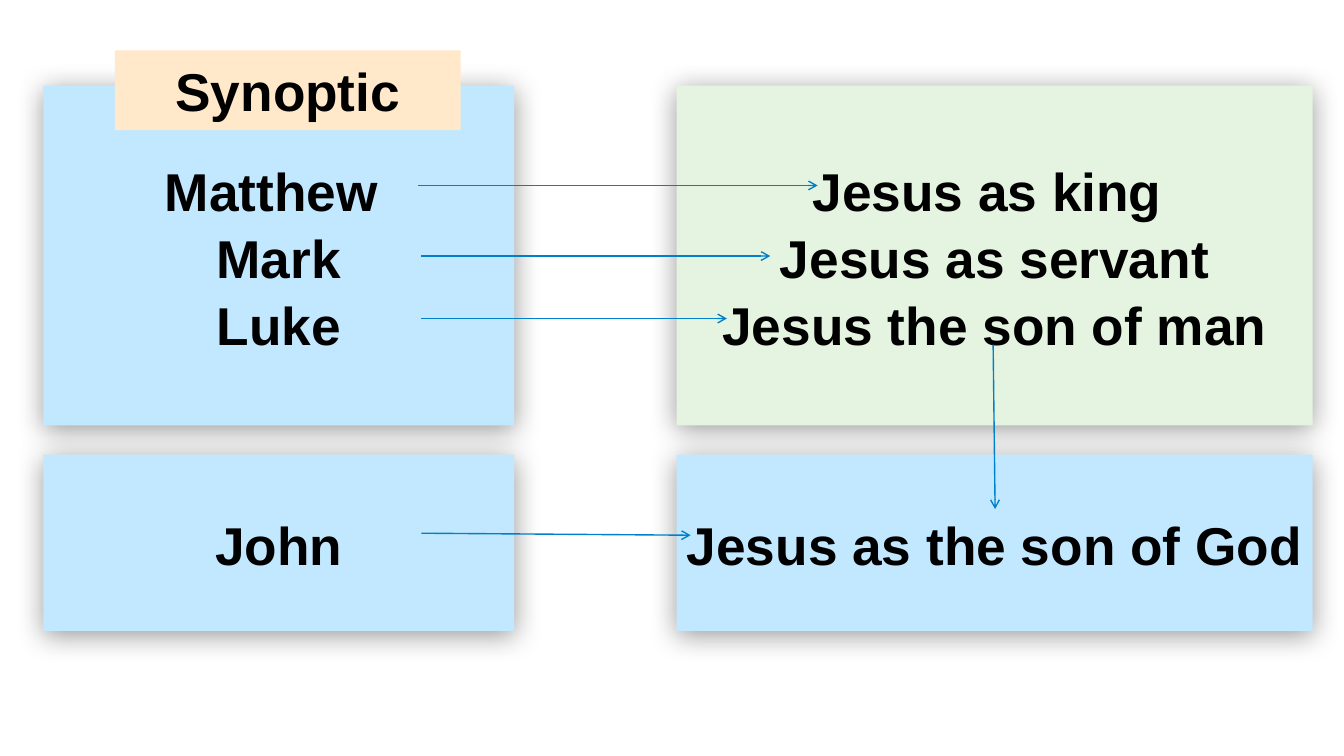
from dataclasses import dataclass

from lxml.etree import SubElement
from pptx import Presentation
from pptx.dml.color import RGBColor
from pptx.enum.shapes import MSO_CONNECTOR, MSO_SHAPE
from pptx.enum.text import MSO_ANCHOR, PP_ALIGN
from pptx.oxml.ns import qn
from pptx.util import Inches, Pt


@dataclass(frozen=True)
class Theme:
    """Colours, type and effects of the slide."""
    blue: str = "C2E8FF"
    green: str = "E5F4E0"
    peach: str = "FFE9CA"
    arrow: str = "0080CB"
    text: str = "000000"
    font: str = "Arial"
    size: int = 38
    spacing: float = 1.05
    line: int = 1


THEME = Theme()


def add_shadow(sp):
    """Give a shape a soft shadow below it."""
    effects = sp._element.spPr.find(qn("a:effectLst"))
    shadow = SubElement(effects, qn("a:outerShdw"), blurRad=str(Pt(20)),
                        dist=str(Pt(3)), dir="5400000", rotWithShape="0")
    color = SubElement(shadow, qn("a:srgbClr"), val="000000")
    SubElement(color, qn("a:alpha"), val="40000")


def add_panel(s, box, fill, lines, anchor=MSO_ANCHOR.MIDDLE, shadow=True):
    """Draw a filled rectangle with centred lines of text."""
    sp = s.shapes.add_shape(MSO_SHAPE.RECTANGLE, *map(Inches, box))
    sp.shadow.inherit = False
    sp.fill.solid()
    sp.fill.fore_color.rgb = RGBColor.from_string(fill)
    sp.line.fill.background()
    if shadow:
        add_shadow(sp)
    tf = sp.text_frame
    frame = {"word_wrap": True, "vertical_anchor": anchor,
             "margin_left": Inches(0.05), "margin_right": Inches(0.05)}
    for name, value in frame.items():
        setattr(tf, name, value)
    for i, line in enumerate(lines):
        p = tf.add_paragraph() if i else tf.paragraphs[0]
        p.alignment = PP_ALIGN.CENTER
        p.line_spacing = THEME.spacing
        r = p.add_run()
        r.text = line
        style = {"name": THEME.font, "size": Pt(THEME.size), "bold": True}
        for name, value in style.items():
            setattr(r.font, name, value)
        r.font.color.rgb = RGBColor.from_string(THEME.text)


def add_arrow(s, start, end):
    """Draw a thin line with an open arrowhead at its end."""
    c = s.shapes.add_connector(MSO_CONNECTOR.STRAIGHT,
                               *map(Inches, (*start, *end)))
    c.line.color.rgb = RGBColor.from_string(THEME.arrow)
    c.line.width = Pt(THEME.line)
    SubElement(c.line._get_or_add_ln(), qn("a:tailEnd"), type="arrow")
    SubElement(c._element.spPr, qn("a:effectLst"))


def add_column(s, box, gap, upper_height, panels):
    """Stack an upper and a lower panel inside a box."""
    left, top, width, height = box
    lower_top = top + upper_height + gap
    spans = [(top, upper_height), (lower_top, top + height - lower_top)]
    for (y, h), (fill, lines) in zip(spans, panels):
        add_panel(s, (left, y, width, h), fill, lines)


def add_gospel_slide(prs):
    """Build the slide that links each gospel to its portrait of Jesus."""
    s = prs.slides.add_slide(prs.slide_layouts[6])
    top, height, gap, upper = 0.85, 5.41, 0.29, 3.37
    gospels = [(THEME.blue, ["Matthew ", "Mark", "Luke"]),
               (THEME.blue, ["John"])]
    portraits = [(THEME.green, ["Jesus as king ", "Jesus as servant",
                                "Jesus the son of man"]),
                 (THEME.blue, ["Jesus as the son of God"])]
    for left, width, panels in [(0.43, 4.67, gospels), (6.71, 6.31, portraits)]:
        add_column(s, (left, top, width, height), gap, upper, panels)
    arrows = [((4.15, 1.84), (8.11, 1.84)), ((4.18, 2.54), (7.64, 2.54)),
              ((4.18, 3.16), (7.21, 3.16)), ((4.18, 5.29), (6.85, 5.31)),
              ((9.85, 3.42), (9.87, 5.05))]
    for start, end in arrows:
        add_arrow(s, start, end)
    add_panel(s, (1.14, 0.5, 3.43, 0.79), THEME.peach, ["Synoptic"],
              MSO_ANCHOR.TOP, shadow=False)


def main():
    """Create and save the presentation."""
    prs = Presentation()
    prs.slide_width, prs.slide_height = Inches(13.33), Inches(7.5)
    add_gospel_slide(prs)
    prs.save("out.pptx")


if __name__ == "__main__":
    main()
